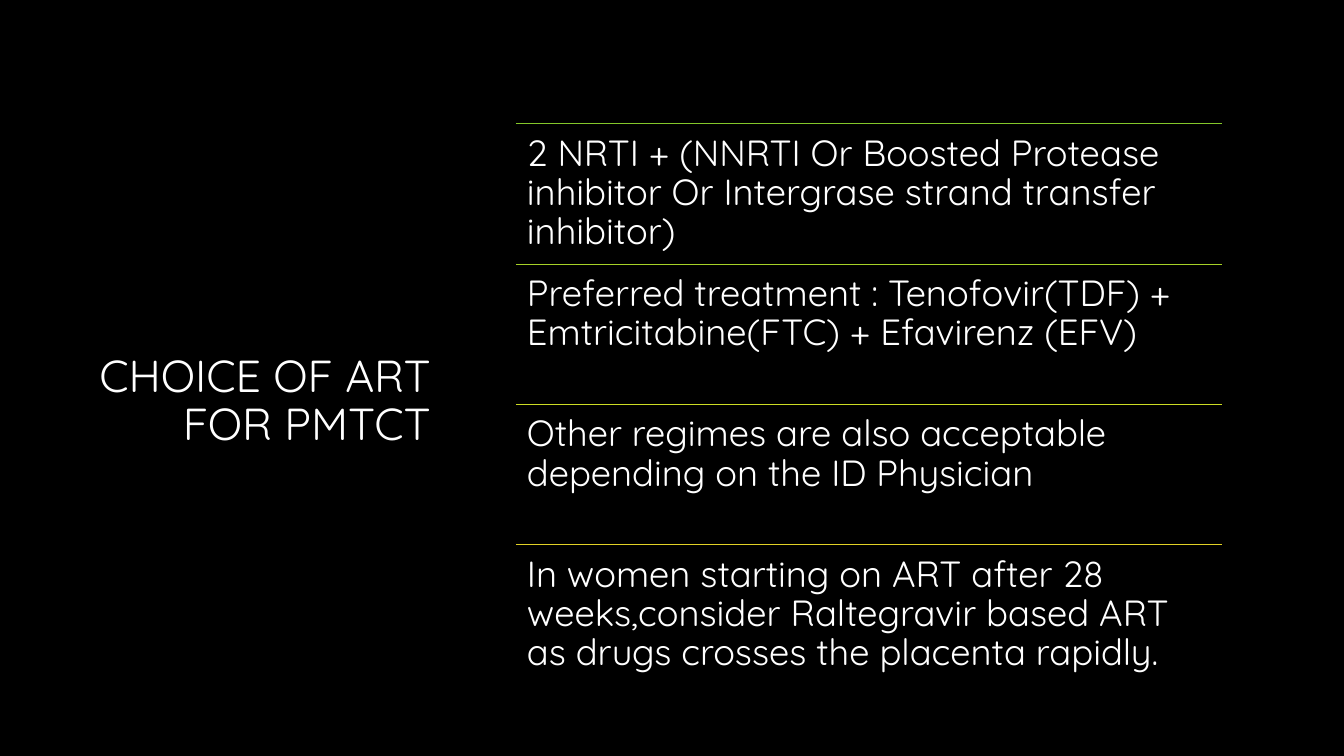
"""Build the slide on the choice of ART for PMTCT."""
from dataclasses import dataclass

from lxml import etree
from pptx import Presentation
from pptx import util as u
from pptx.dml.color import RGBColor
from pptx.enum import shapes, text
from pptx.oxml.ns import qn

TITLE = "CHOICE OF ART FOR PMTCT"
POINTS = [
    ("2 NRTI + (NNRTI Or Boosted Protease inhibitor Or Intergrase strand transfer inhibitor)", "84C72A"),
    ("Preferred treatment : Tenofovir(TDF) + Emtricitabine(FTC) + Efavirenz (EFV)", "A6D127"),
    ("Other regimes are also acceptable depending on the ID Physician", "CCDC24"),
    ("In women starting on ART after 28 weeks,consider Raltegravir based ART as drugs crosses the placenta rapidly.",
     "E1D126"),
]

SLIDE = (1344, 756)
TITLE_AREA = (76, 118, 365, 568)
LIST_AREA = (516, 124, 706, 561)
TITLE_INSET = (10, 5)
POINT_INSET = (11, 11)


@dataclass(frozen=True)
class Theme:
    font: str = "Quicksand"
    back: str = "000000"
    ink: str = "FFFFFF"
    title_size: int = 32
    point_size: int = 26
    rule_width: float = 0.75
    line_spacing: float = 0.9


THEME = Theme()


def px(length):
    return u.Emu(round(length * 914400 / 100.8))


def add_text(page, area, words, size, inset, anchor, align):
    box = page.shapes.add_textbox(*map(px, area))
    frame = box.text_frame
    frame.word_wrap = True
    frame.vertical_anchor = anchor
    frame.margin_left = frame.margin_right = px(inset[0])
    frame.margin_top = frame.margin_bottom = px(inset[1])
    para = frame.paragraphs[0]
    para.alignment = align
    para.line_spacing = THEME.line_spacing
    span = para.add_run()
    span.text = words
    span.font.name = THEME.font
    span.font.size = u.Pt(size)
    span.font.color.rgb = RGBColor.from_string(THEME.ink)


def add_rule(page, left, top, width, color):
    rule = page.shapes.add_connector(
        shapes.MSO_CONNECTOR.STRAIGHT, px(left), px(top), px(left + width), px(top))
    rule.line.color.rgb = RGBColor.from_string(color)
    rule.line.width = u.Pt(THEME.rule_width)
    etree.SubElement(rule._element.spPr, qn("a:effectLst"))


def main():
    deck = Presentation()
    deck.slide_width, deck.slide_height = map(px, SLIDE)
    page = deck.slides.add_slide(deck.slide_layouts[6])
    page.background.fill.solid()
    page.background.fill.fore_color.rgb = RGBColor.from_string(THEME.back)

    add_text(page, TITLE_AREA, TITLE, THEME.title_size, TITLE_INSET,
             text.MSO_ANCHOR.MIDDLE, text.PP_ALIGN.RIGHT)

    left, first_top, width, height = LIST_AREA
    row_height = height / len(POINTS)
    for row, (words, color) in enumerate(POINTS):
        top = first_top + row * row_height
        add_rule(page, left, top, width, color)
        add_text(page, (left, top, width, row_height), words, THEME.point_size, POINT_INSET,
                 text.MSO_ANCHOR.TOP, text.PP_ALIGN.LEFT)

    deck.save("out.pptx")


if __name__ == "__main__":
    main()
